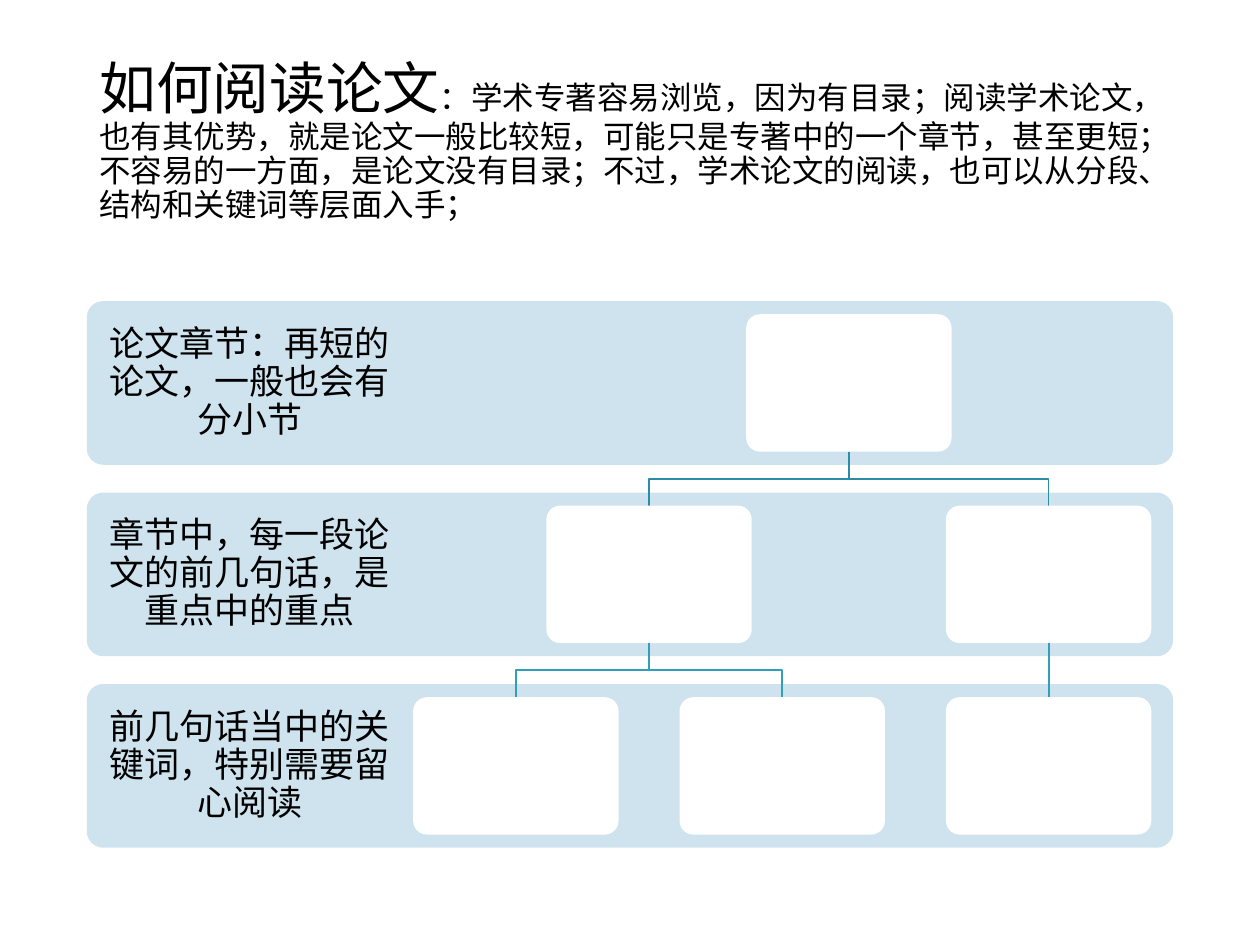
"""Build a slide on how to read papers, with a three-level tree over labelled bands."""
import pptx
import pptx.dml.color
import pptx.enum.shapes
import pptx.enum.text
import pptx.oxml.ns
import pptx.util
from lxml import etree

Cm = pptx.util.Cm

TITLE = [
    ("如何阅读论文", "heading"),
    ("：学术专著容易浏览，因为有目录；阅读学术论文，也有其优势，就是论文一般比较短，"
     "可能只是专著中的一个章节，甚至更短；不容易的一方面，是论文没有目录；不过，"
     "学术论文的阅读，也可以从分段、结构和关键词等层面入手；", "summary"),
]
BANDS = [
    "论文章节：再短的论文，一般也会有分小节",
    "章节中，每一段论文的前几句话，是重点中的重点",
    "前几句话当中的关键词，特别需要留心阅读",
]
TREE = [[[], []], [[]]]

THEME = {
    "font": "Times New Roman", "text": "000000", "band": "CEE3ED", "box": "FFFFFF",
    "links": ["2B8CA5", "319FBB"], "line": 1,
    "heading": 32.4, "summary": 18, "label": 20,
}

LEFT, WIDTH = 1.75, 21.9
BAND_TOP, BAND_HEIGHT, BAND_PITCH = 6.07, 3.3, 3.86
LABEL_WIDTH, LABEL_INSET = 6.57, 0.4
BOX_WIDTH, BOX_HEIGHT = 4.14, 2.77
FIRST_LEAF, LEAF_PITCH = 10.4, 5.37


def color(name):
    return pptx.dml.color.RGBColor.from_string(name)


def format_run(run, size):
    run.font.name = THEME["font"]
    run.font.size = pptx.util.Pt(THEME[size])
    run.font.color.rgb = color(THEME["text"])


def add_title(slide):
    title = slide.shapes.title
    title.left, title.top, title.width, title.height = Cm(LEFT), Cm(1.02), Cm(WIDTH), Cm(3.68)
    frame = title.text_frame
    frame.auto_size = pptx.enum.text.MSO_AUTO_SIZE.NONE
    frame.vertical_anchor = pptx.enum.text.MSO_ANCHOR.MIDDLE
    paragraph = frame.paragraphs[0]
    paragraph.alignment = pptx.enum.text.PP_ALIGN.LEFT
    paragraph.line_spacing = 0.9
    for text, size in TITLE:
        run = paragraph.add_run()
        run.text = text
        format_run(run, size)


def add_rounded(slide, left, top, width, height, fill):
    shape = slide.shapes.add_shape(
        pptx.enum.shapes.MSO_SHAPE.ROUNDED_RECTANGLE, Cm(left), Cm(top), Cm(width), Cm(height))
    shape.adjustments[0] = 0.1
    shape.shadow.inherit = False
    shape.fill.solid()
    shape.fill.fore_color.rgb = color(THEME[fill])
    shape.line.fill.background()


def add_band(slide, level, text):
    top = BAND_TOP + level * BAND_PITCH
    add_rounded(slide, LEFT, top, WIDTH, BAND_HEIGHT, "band")
    label = slide.shapes.add_textbox(Cm(LEFT), Cm(top), Cm(LABEL_WIDTH), Cm(BAND_HEIGHT))
    frame = label.text_frame
    frame.text = text
    frame.word_wrap = True
    frame.vertical_anchor = pptx.enum.text.MSO_ANCHOR.MIDDLE
    frame.margin_left = frame.margin_right = Cm(LABEL_INSET)
    frame.margin_top = frame.margin_bottom = Cm(LABEL_INSET)
    paragraph = frame.paragraphs[0]
    paragraph.alignment = pptx.enum.text.PP_ALIGN.CENTER
    paragraph.line_spacing = 0.9
    format_run(paragraph.runs[0], "label")


def box_top(level):
    return BAND_TOP + level * BAND_PITCH + (BAND_HEIGHT - BOX_HEIGHT) / 2


def place(children, leaves):
    """Return the node as its centre and placed children, drawing leaf centres in order."""
    placed = [place(child, leaves) for child in children]
    if not placed:
        return next(leaves), placed
    return (placed[0][0] + placed[-1][0]) / 2, placed


def add_link(slide, parent, child, level):
    start, end = box_top(level) + BOX_HEIGHT, box_top(level + 1)
    if abs(parent - child) < 0.01:
        link = slide.shapes.add_connector(
            pptx.enum.shapes.MSO_CONNECTOR.STRAIGHT, Cm(parent), Cm(start), Cm(child), Cm(end))
        etree.SubElement(link.element.spPr, pptx.oxml.ns.qn("a:effectLst"))
    else:
        middle = (start + end) / 2
        builder = slide.shapes.build_freeform(Cm(parent), Cm(start))
        corners = [(parent, middle), (child, middle), (child, end)]
        builder.add_line_segments([(Cm(x), Cm(y)) for x, y in corners], close=False)
        link = builder.convert_to_shape()
        link.shadow.inherit = False
        link.fill.background()
    link.line.color.rgb = color(THEME["links"][level])
    link.line.width = pptx.util.Pt(THEME["line"])


def add_node(slide, node, level=0):
    center, children = node
    add_rounded(slide, center - BOX_WIDTH / 2, box_top(level), BOX_WIDTH, BOX_HEIGHT, "box")
    for child in children:
        add_link(slide, center, child[0], level)
        add_node(slide, child, level + 1)


def main():
    presentation = pptx.Presentation()
    presentation.slide_width, presentation.slide_height = Cm(25.4), Cm(19.05)
    slide = presentation.slides.add_slide(presentation.slide_layouts[5])
    add_title(slide)
    for level, text in reversed(list(enumerate(BANDS))):
        add_band(slide, level, text)
    leaves = (FIRST_LEAF + index * LEAF_PITCH for index in range(3))
    add_node(slide, place(TREE, leaves))
    presentation.save("out.pptx")


if __name__ == "__main__":
    main()
